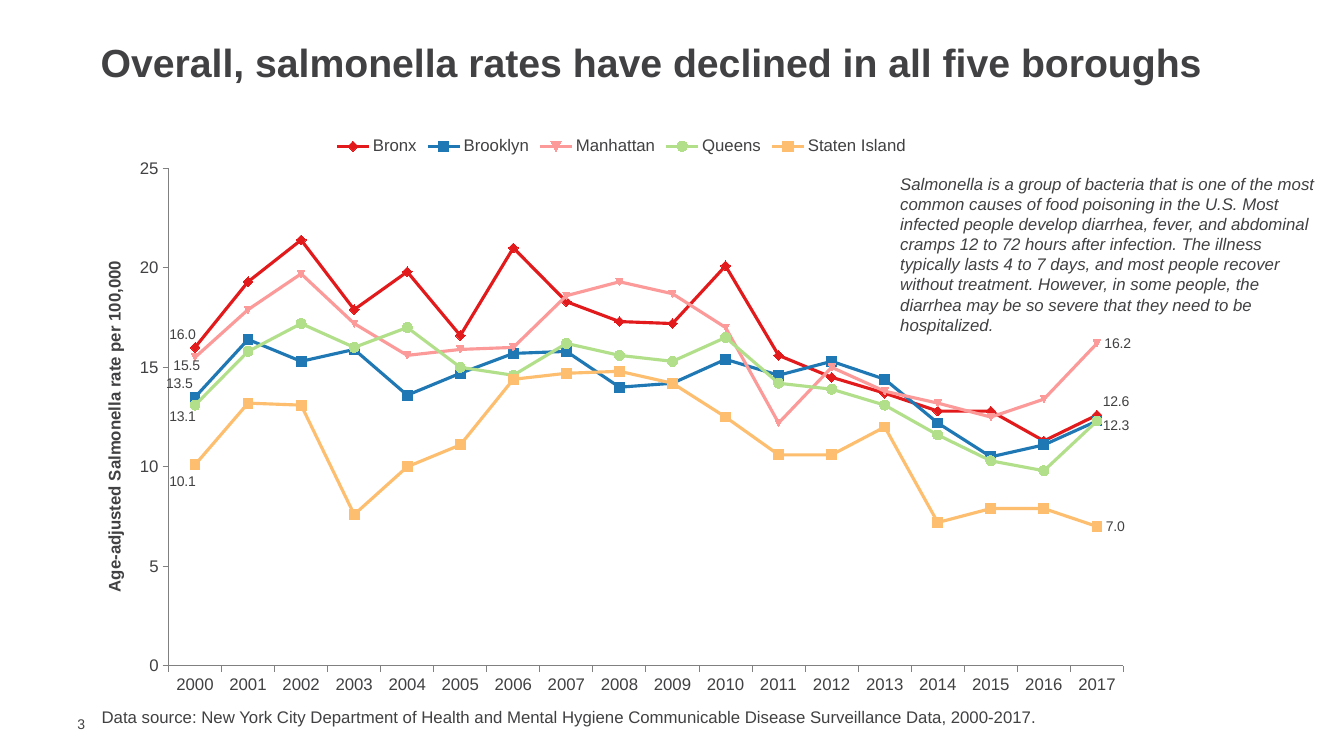
"""Build a slide charting salmonella rates in the five New York boroughs, 2000-2017."""
from lxml import etree
from pptx import Presentation
from pptx.chart.data import CategoryChartData
from pptx.dml.color import RGBColor
from pptx.enum.chart import XL_CHART_TYPE, XL_LEGEND_POSITION, XL_TICK_MARK
from pptx.enum.chart import XL_LABEL_POSITION as Place, XL_MARKER_STYLE as Marker
from pptx.enum.text import MSO_ANCHOR
from pptx.oxml.ns import qn
from pptx.util import Inches, Pt

INK = RGBColor(0x41, 0x40, 0x42)
AXIS_GREY = RGBColor(0x80, 0x80, 0x80)
RED = RGBColor(0xE3, 0x1A, 0x1C)
BLUE = RGBColor(0x1F, 0x78, 0xB4)
PINK = RGBColor(0xFB, 0x9A, 0x99)
GREEN = RGBColor(0xB2, 0xDF, 0x8A)
ORANGE = RGBColor(0xFD, 0xBF, 0x6F)
FONT = "Arial"
FIRST, LAST = 0, 17

BOROUGHS = [
    ("Bronx", RED, Marker.DIAMOND,
     [16, 19.3, 21.4, 17.9, 19.8, 16.6, 21, 18.3, 17.3, 17.2, 20.1, 15.6, 14.5, 13.7, 12.8, 12.8, 11.3, 12.6],
     [(FIRST, Place.ABOVE, -0.012, 0.007), (LAST, Place.RIGHT, -0.003, -0.023)]),
    ("Brooklyn", BLUE, Marker.SQUARE,
     [13.5, 16.4, 15.3, 15.9, 13.6, 14.7, 15.7, 15.8, 14, 14.2, 15.4, 14.6, 15.3, 14.4, 12.2, 10.5, 11.1, 12.3],
     [(FIRST, Place.ABOVE, -0.015, 0.005)]),
    ("Manhattan", PINK, None,
     [15.5, 17.9, 19.7, 17.2, 15.6, 15.9, 16, 18.6, 19.3, 18.7, 17, 12.2, 15, 13.8, 13.2, 12.5, 13.4, 16.2],
     [(FIRST, Place.BELOW, -0.008, -0.012), (LAST, Place.RIGHT, 0, 0)]),
    ("Queens", GREEN, Marker.CIRCLE,
     [13.1, 15.8, 17.2, 16, 17, 15, 14.6, 16.2, 15.6, 15.3, 16.5, 14.2, 13.9, 13.1, 11.6, 10.3, 9.8, 12.3],
     [(FIRST, Place.BELOW, -0.012, -0.009), (LAST, Place.RIGHT, -0.003, 0.009)]),
    ("Staten Island", ORANGE, Marker.SQUARE,
     [10.1, 13.2, 13.1, 7.6, 10, 11.1, 14.4, 14.7, 14.8, 14.2, 12.5, 10.6, 10.6, 12, 7.2, 7.9, 7.9, 7],
     [(FIRST, Place.BELOW, -0.012, 0), (LAST, Place.RIGHT, 0, 0)]),
]


def style(font, size, bold=False, italic=False):
    font.name, font.size, font.bold, font.italic = FONT, Pt(size), bold, italic
    font.color.rgb = INK


def manual_layout(**settings):
    layout = etree.Element(qn("c:layout"))
    manual = etree.SubElement(layout, qn("c:manualLayout"))
    for tag, value in settings.items():
        etree.SubElement(manual, qn(f"c:{tag}")).set("val", str(value))
    return layout


deck = Presentation()
deck.slide_width, deck.slide_height = Inches(13.33), Inches(7.5)
slide = deck.slides.add_slide(deck.slide_layouts[6])

rates = CategoryChartData(number_format="0.0")
rates.categories = [str(year) for year in range(2000, 2018)]
for name, _, _, values, _ in BOROUGHS:
    rates.add_series(name, values)
chart = slide.shapes.add_chart(XL_CHART_TYPE.LINE_MARKERS, Inches(1), Inches(1.25),
                               Inches(10.33), Inches(5.68), rates).chart
style(chart.font, 10)
chart.has_title = False
chart.has_legend = True
chart.legend.position = XL_LEGEND_POSITION.TOP
chart.legend.include_in_layout = False
style(chart.legend.font, 12)

plot_area = chart.plots[0]._element.getparent()
for old in plot_area.findall(qn("c:layout")):
    plot_area.remove(old)
plot_area.insert(0, manual_layout(layoutTarget="inner", xMode="edge", yMode="edge",
                                  x=0.065, y=0.074, w=0.917, h=0.869))

for axis in (chart.category_axis, chart.value_axis):
    axis.has_major_gridlines = False
    axis.major_tick_mark = XL_TICK_MARK.OUTSIDE
    axis.minor_tick_mark = XL_TICK_MARK.NONE
    axis.format.line.color.rgb = AXIS_GREY
    axis.format.line.width = Pt(0.75)
    style(axis.tick_labels.font, 12)

rate_axis = chart.value_axis
rate_axis.minimum_scale, rate_axis.maximum_scale, rate_axis.major_unit = 0, 25, 5
rate_axis.tick_labels.number_format = "0"
rate_axis.tick_labels.number_format_is_linked = False
rate_title = rate_axis.axis_title.text_frame
rate_title.text = "Age-adjusted Salmonella rate per 100,000"
style(rate_title.paragraphs[0].runs[0].font, 12, bold=True)

for borough, (_, color, marker, _, labels) in zip(chart.plots[0].series, BOROUGHS):
    borough.smooth = False
    borough.format.line.color.rgb = color
    borough.format.line.width = Pt(2.25)
    if marker:
        borough.marker.style = marker
        borough.marker.size = 7
        borough.marker.format.fill.solid()
        borough.marker.format.fill.fore_color.rgb = color
        borough.marker.format.line.color.rgb = color
    borough.data_labels.show_value = False
    for index, place, dx, dy in labels:
        label = borough.points[index].data_label
        style(label.font, 10)
        label.position = place
        if dx or dy:
            entry = borough.data_labels._element.find(f"{qn('c:dLbl')}[last()]")
            entry.find(qn("c:idx")).addnext(manual_layout(x=dx, y=dy))

TEXTS = [
    ("Overall, salmonella rates have declined in all five boroughs",
     (0.9, 0.42, 11.53, 0.48), 28, True, False),
    ("Salmonella is a group of bacteria that is one of the most common causes of food poisoning "
     "in the U.S. Most infected people develop diarrhea, fever, and abdominal cramps 12 to 72 hours "
     "after infection. The illness typically lasts 4 to 7 days, and most people recover without "
     "treatment. However, in some people, the diarrhea may be so severe that they need to be "
     "hospitalized.", (8.83, 1.67, 4.42, 1.51), 12, False, True),
    ("Data source: New York City Department of Health and Mental Hygiene Communicable Disease "
     "Surveillance Data, 2000-2017.", (0.91, 6.96, 9.92, 0.3), 12, False, False),
    ("3", (0.67, 7.1, 0.43, 0.17), 10, False, False),
]
frames = []
for wording, place, size, bold, italic in TEXTS:
    frame = slide.shapes.add_textbox(*map(Inches, place)).text_frame
    frame.word_wrap = True
    frame.text = wording
    style(frame.paragraphs[0].runs[0].font, size, bold, italic)
    frames.append(frame)

headline, *_, page_number = frames
headline.paragraphs[0].line_spacing = 0.8
headline.vertical_anchor = page_number.vertical_anchor = MSO_ANCHOR.MIDDLE
page_number.margin_top = page_number.margin_bottom = page_number.margin_right = 0

deck.save("out.pptx")
